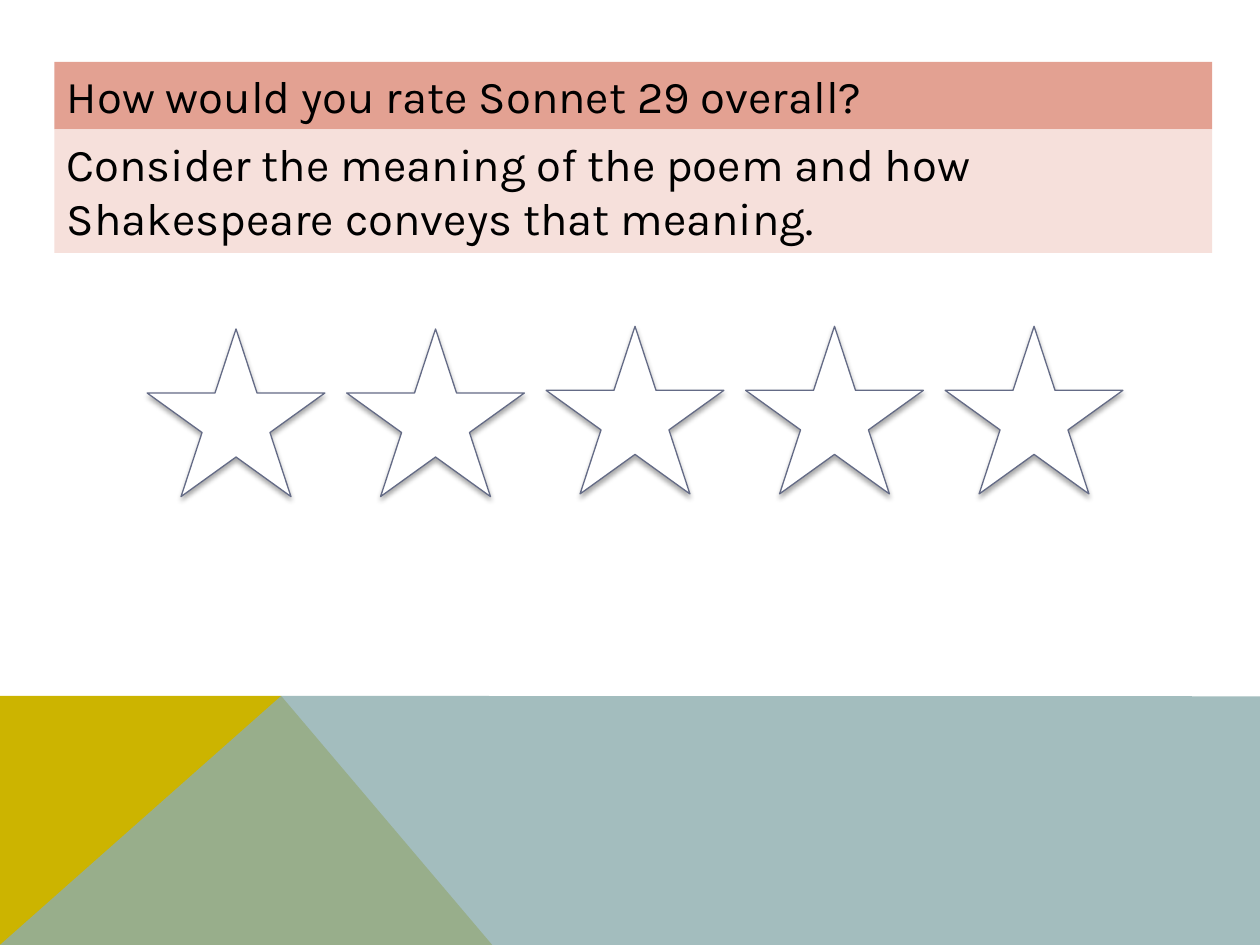
import pptx
import pptx.util
import pptx.dml.color
import pptx.enum.shapes
import pptx.enum.text
import pptx.oxml
import pptx.oxml.ns

Pt = pptx.util.Pt

COLORS = {
    "gold": "CCB400", "teal": "8CADAE", "rose": "E3A192", "blush": "F6E0DB",
    "white": "FFFFFF", "slate": "646B86", "black": "000000",
}
WIDE, HIGH = 720, 540
HEAD = "How would you rate Sonnet 29 overall?"
BODY = "Consider the meaning of the poem and how Shakespeare conveys that meaning."
HEAD_BOX = (31, 35.3, 661.7, 38.7)
BODY_BOX = (31, 74, 661.7, 70.5)

# Base bands: fill, opacity in percent, corners
BANDS = [
    ("gold", 100, [(0, 540), (0, 397.7), (160.7, 397.7), (281.3, 540)]),
    ("teal", 80, [(0, 540), (160.7, 397.7), (720, 397.9), (720, 540)]),
]
STAR_TOPS = [188, 188, 186.5, 186.5, 186.5]
STAR_LEFT, STAR_STEP, STAR_WIDE, STAR_HIGH = 84.1, 114, 101.6, 95.8
FRAME = {
    "margin_left": Pt(7.2), "margin_right": Pt(7.2),
    "margin_top": Pt(3.6), "margin_bottom": Pt(3.6), "word_wrap": True,
    "auto_size": pptx.enum.text.MSO_AUTO_SIZE.NONE,
    "vertical_anchor": pptx.enum.text.MSO_ANCHOR.TOP,
}
FONT = {"name": "Karla", "size": Pt(26), "bold": False}


def rgb(name):
    return pptx.dml.color.RGBColor.from_string(COLORS[name])


def paint(shape, name):
    shape.fill.solid()
    shape.fill.fore_color.rgb = rgb(name)


def set_all(item, values):
    for key, value in values.items():
        setattr(item, key, value)


def add_node(parent, tag, **values):
    node = pptx.oxml.ns.qn(tag)
    child = parent.makeelement(node, {k: str(v) for k, v in values.items()})
    parent.append(child)
    return child


def add_band(slide, name, alpha, points):
    start, *rest = [(Pt(x), Pt(y)) for x, y in points]
    path = slide.shapes.build_freeform(*start)
    path.add_line_segments(rest, close=True)
    band = path.convert_to_shape()
    paint(band, name)
    band.line.fill.background()
    band.shadow.inherit = False
    if alpha < 100:
        color = band.fill._xPr.find(".//" + pptx.oxml.ns.qn("a:srgbClr"))
        add_node(color, "a:alpha", val=alpha * 1000)


def write(shape, text, box, fill):
    """Place a filled text panel and format its one paragraph."""
    set_all(shape, dict(zip(("left", "top", "width", "height"), map(Pt, box))))
    paint(shape, fill)
    frame = shape.text_frame
    frame.text = text
    set_all(frame, FRAME)
    para = frame.paragraphs[0]
    set_all(para, {"alignment": pptx.enum.text.PP_ALIGN.LEFT,
                   "line_spacing": 1.0, "space_before": Pt(0)})
    font = para.runs[0].font
    set_all(font, FONT)
    font.color.rgb = rgb("black")


def add_star(slide, left, top):
    star = slide.shapes.add_shape(
        pptx.enum.shapes.MSO_SHAPE.STAR_5_POINT,
        Pt(left), Pt(top), Pt(STAR_WIDE), Pt(STAR_HIGH))
    paint(star, "white")
    star.line.color.rgb = rgb("slate")
    star.line.width = Pt(0.75)
    star.shadow.inherit = False
    effects = star._element.spPr.find(pptx.oxml.ns.qn("a:effectLst"))
    shade = add_node(effects, "a:outerShdw", blurRad=Pt(3.1), dist=Pt(1.8),
                     dir=90 * 60000, rotWithShape=0)
    color = add_node(shade, "a:srgbClr", val=COLORS["black"])
    add_node(color, "a:alpha", val=35000)


def main():
    deck = pptx.Presentation()
    deck.slide_width, deck.slide_height = Pt(WIDE), Pt(HIGH)
    slide = deck.slides.add_slide(deck.slide_layouts.get_by_name("Title Only"))
    paint(slide.background, "white")
    for band in BANDS:
        add_band(slide, *band)
    write(slide.shapes.title, HEAD, HEAD_BOX, "rose")
    for i, top in enumerate(STAR_TOPS):
        add_star(slide, STAR_LEFT + i * STAR_STEP, top)
    write(slide.shapes.add_textbox(0, 0, 0, 0), BODY, BODY_BOX, "blush")
    deck.save("out.pptx")


if __name__ == "__main__":
    main()
